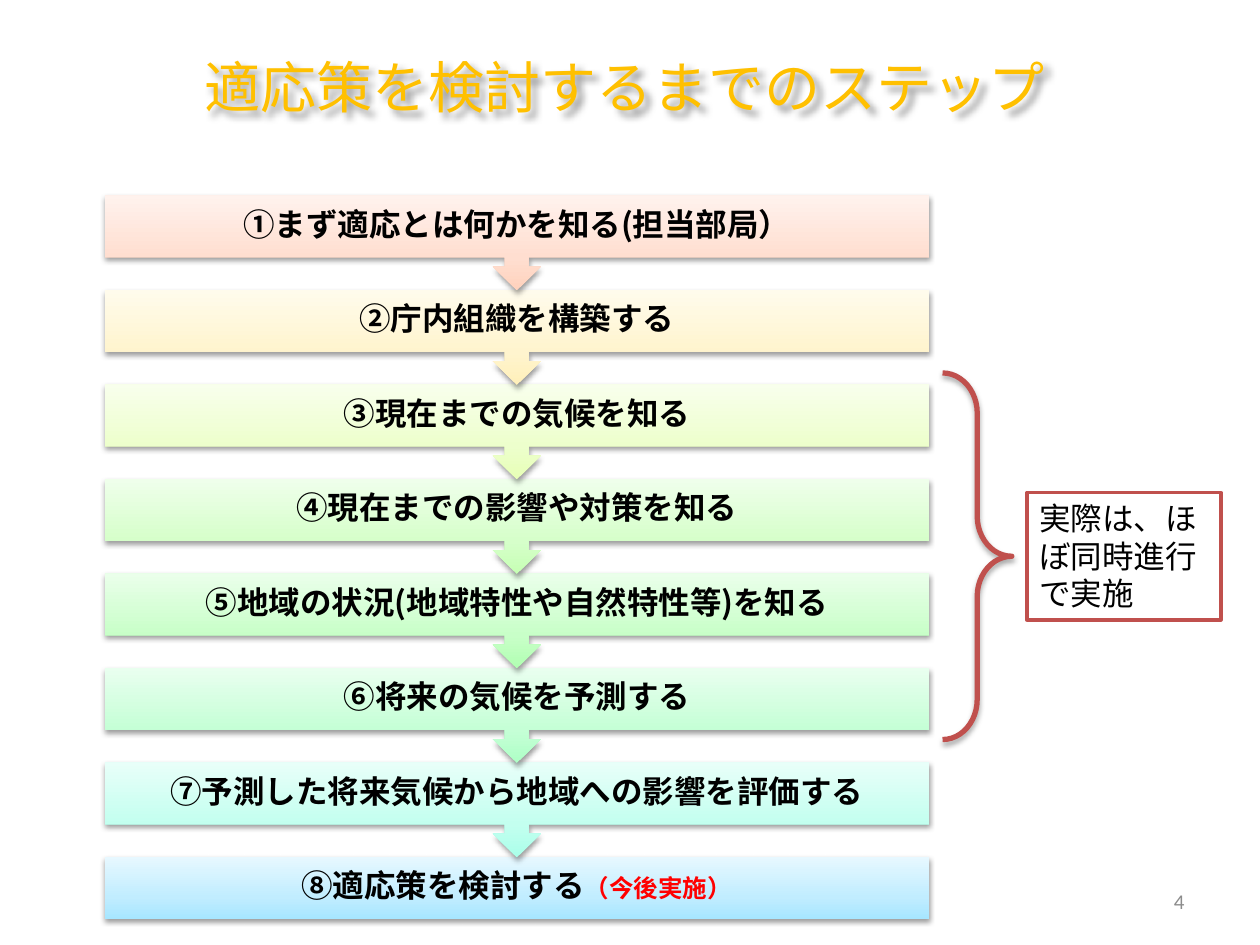
import pptx
import pptx.util
import pptx.oxml
import pptx.oxml.ns
from dataclasses import dataclass
from lxml import etree
from pptx.dml.color import RGBColor
from pptx.enum.shapes import MSO_SHAPE
from pptx.enum.text import MSO_ANCHOR, PP_ALIGN

Pt = pptx.util.Pt
qn = pptx.oxml.ns.qn


@dataclass(frozen=True)
class Theme:
    jp: str = "Noto Sans CJK JP"
    latin: str = "Calibri"
    ink: str = "000000"
    white: str = "FFFFFF"
    amber: str = "FFC000"
    outline: str = "0D0D0D"
    red: str = "FF0000"
    accent: str = "C0504D"
    grey: str = "8C8C8C"
    title: int = 32
    body: int = 18
    note: int = 14
    number: int = 12


T = Theme()

# Step label, optional red note, gradient from bottom to top
STEPS = [
    ("①まず適応とは何かを知る(担当部局）", "", ("FFD2BD", "FFDED0", "FFF2ED")),
    ("②庁内組織を構築する", "", ("FFF0BA", "FFF4CE", "FFFBEC")),
    ("③現在までの気候を知る", "", ("E7FFB7", "EDFFCC", "F8FFEC")),
    ("④現在までの影響や対策を知る", "", ("C6FFB4", "D6FFCA", "EFFFEB")),
    ("⑤地域の状況(地域特性や自然特性等)を知る", "", ("B1FFB2", "C8FFC8", "EAFFEA")),
    ("⑥将来の気候を予測する", "", ("AEFFC6", "C5FFD6", "E9FFEF")),
    ("⑦予測した将来気候から地域への影響を評価する", "", ("AAFFEA", "C3FFEF", "E8FFF9")),
    ("⑧適応策を検討する", "（今後実施）", ("A7E6FF", "C1EDFF", "E7F8FF")),
]


def add(parent, tag, **attrs):
    return etree.SubElement(parent, qn(tag), {k: str(v) for k, v in attrs.items()})


def style(font, size, color, name=T.jp, bold=None):
    font.size, font.bold, font.name = Pt(size), bold, name
    font.color.rgb = RGBColor.from_string(color)
    add(font._element, "a:ea", typeface=name)


def shadow(sp, alpha, blur, dist, angle):
    sp.shadow.inherit = False
    effects = sp._element.spPr.find(qn("a:effectLst"))
    outer = add(effects, "a:outerShdw", blurRad=Pt(blur), dist=Pt(dist),
                dir=angle * 60000, algn="ctr", rotWithShape=0)
    add(add(outer, "a:srgbClr", val=T.ink), "a:alpha", val=alpha * 1000)


def gradient(sp, colors):
    sp.fill.gradient()
    sp.fill.gradient_angle = 90  # counter-clockwise: bottom to top
    grad = sp._element.spPr.find(qn("a:gradFill"))
    grad.set("rotWithShape", "0")
    stops = grad.find(qn("a:gsLst"))
    for old in list(stops):
        stops.remove(old)
    for pos, color in zip((0, 35, 100), colors):
        add(add(stops, "a:gs", pos=pos * 1000), "a:srgbClr", val=color)


def text_box(s, box, align, margin=None):
    sp = s.shapes.add_textbox(*map(Pt, box))
    tf = sp.text_frame
    tf.word_wrap, tf.vertical_anchor = True, MSO_ANCHOR.MIDDLE
    if margin is not None:
        tf.margin_left = tf.margin_right = tf.margin_top = tf.margin_bottom = Pt(margin)
    p = tf.paragraphs[0]
    p.alignment = align
    return sp, p


def title(s, box, text):
    sp, p = text_box(s, box, PP_ALIGN.CENTER)
    r = p.add_run()
    r.text = text
    style(r.font, T.title, T.amber)
    ln = add(r.font._element, "a:ln", w=Pt(0.75))
    add(add(ln, "a:solidFill"), "a:srgbClr", val=T.outline)
    r.font._element.insert(0, ln)
    shadow(sp, 40, 4, 4, 45)


def step_chain(s, box, steps):
    left, top, width, height = box
    label_h = 35.3
    pitch = (height - label_h) / (len(steps) - 1)
    # Last step first, so each arrow tip lies over the bar below it
    for i, (label, note, colors) in reversed(list(enumerate(steps))):
        y = top + i * pitch
        last = i == len(steps) - 1
        kind = MSO_SHAPE.RECTANGLE if last else MSO_SHAPE.UP_ARROW_CALLOUT
        bar_h = label_h if last else pitch + 0.4
        sp = s.shapes.add_shape(kind, Pt(left), Pt(y), Pt(width), Pt(bar_h))
        sp.rotation = 0 if last else 180
        gradient(sp, colors)
        sp.line.fill.background()
        shadow(sp, 38, 3.1, 1.6, 90)

        _, p = text_box(s, (left, y, width, label_h), PP_ALIGN.CENTER, 10)
        p.line_spacing = 0.9
        for text, size, color in ((label, T.body, T.ink), (note, T.note, T.red)):
            if text:
                r = p.add_run()
                r.text = text
                style(r.font, size, color, bold=True)


def bracket(s, box):
    sp = s.shapes.add_shape(MSO_SHAPE.RIGHT_BRACE, *map(Pt, box))
    sp.adjustments[0], sp.adjustments[1] = 0.58, 0.5
    sp.fill.background()
    sp.line.color.rgb = RGBColor.from_string(T.accent)
    sp.line.width = Pt(3)
    shadow(sp, 35, 3.1, 1.8, 90)


def remark(s, box, text):
    sp = s.shapes.add_shape(MSO_SHAPE.RECTANGLE, *map(Pt, box))
    sp.shadow.inherit = False
    sp.fill.solid()
    sp.fill.fore_color.rgb = RGBColor.from_string(T.white)
    sp.line.color.rgb = RGBColor.from_string(T.accent)
    sp.line.width = Pt(2)
    tf = sp.text_frame
    tf.word_wrap, tf.vertical_anchor = True, MSO_ANCHOR.TOP
    p = tf.paragraphs[0]
    p.text, p.alignment = text, PP_ALIGN.LEFT
    style(p.font, T.body, T.ink)


def page_number(s, box, text):
    _, p = text_box(s, box, PP_ALIGN.RIGHT)
    p.text = text
    style(p.font, T.number, T.grey, T.latin)


def main():
    prs = pptx.Presentation()
    prs.slide_width, prs.slide_height = Pt(720), Pt(540)
    s = prs.slides.add_slide(prs.slide_layouts[6])
    step_chain(s, (59.8, 111.6, 471, 413.3), STEPS)
    bracket(s, (538.6, 213.1, 39.6, 209.5))
    remark(s, (586.8, 281.5, 110.9, 72.7), "実際は、ほぼ同時進行で実施")
    title(s, (33.1, 15.1, 648, 67.7), "適応策を検討するまでのステップ")
    page_number(s, (516.2, 500.4, 167.8, 28.8), "4")
    prs.save("out.pptx")


if __name__ == "__main__":
    main()
